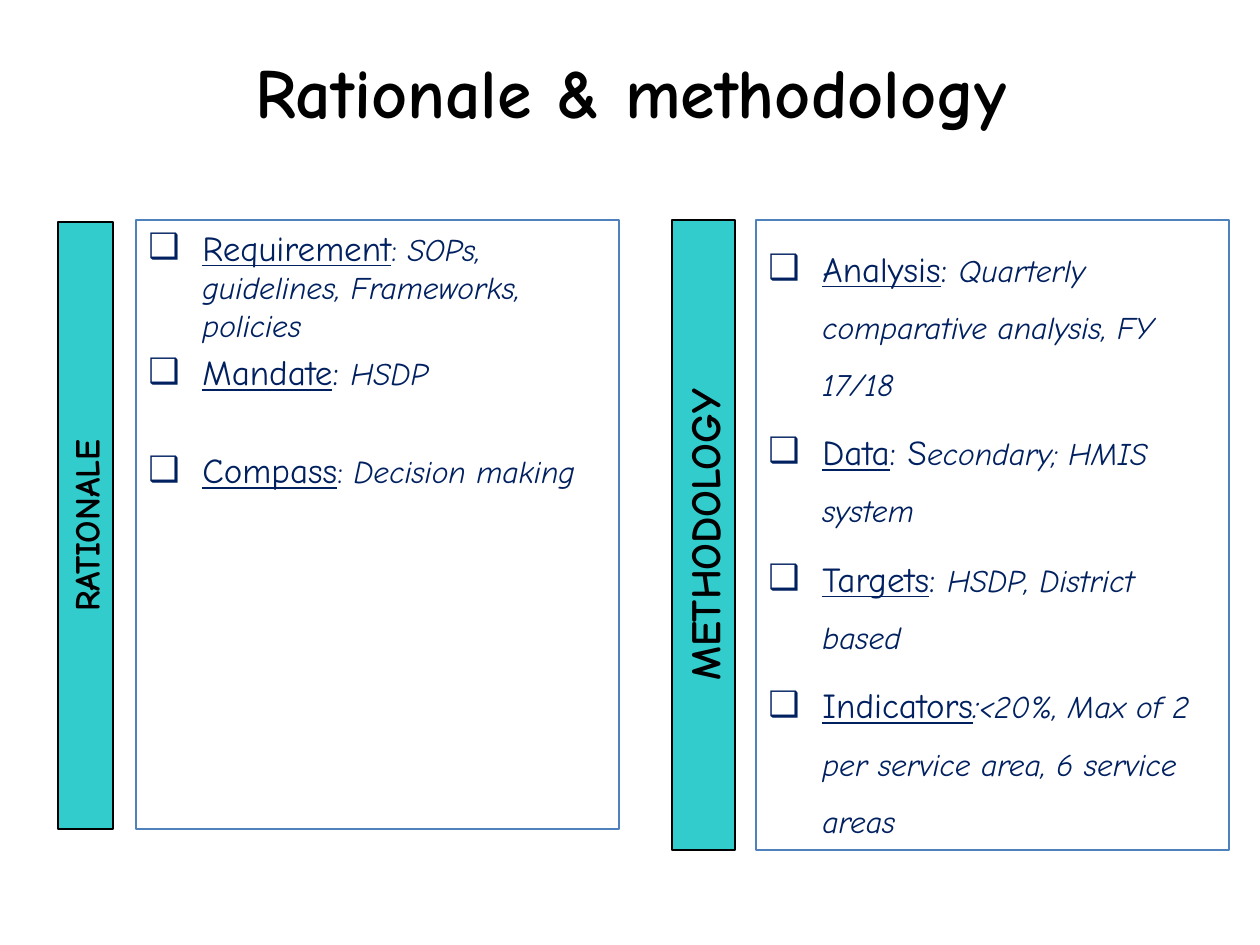
from pptx import Presentation
from pptx.dml.color import RGBColor
from pptx.enum.shapes import MSO_SHAPE as Shape
from pptx.enum.text import MSO_ANCHOR as Anchor, PP_ALIGN as Align
from pptx.oxml.ns import qn
from pptx.util import Emu, Pt
from lxml.etree import SubElement

PX_PER_INCH = 126
FONT = "Comic Neue"
TEAL, BLACK, NAVY, BLUE = "33CCCC", "000000", "002060", "4F81BD"


def px(length):
    """Turn pixels into EMU."""
    return Emu(round(length * 914400 / PX_PER_INCH))


def colour(code):
    """Turn a hex string into a colour."""
    return RGBColor.from_string(code)


def add_span(para, text, size=18, code=NAVY, bold=False, italic=False, underline=False):
    """Add one formatted run to a paragraph."""
    span = para.add_run()
    span.text = text
    font = span.font
    font.name, font.size, font.color.rgb = FONT, Pt(size), colour(code)
    font.bold, font.italic, font.underline = bold, italic, underline


def add_bullet(para, indent):
    """Give a paragraph a box bullet with a hanging indent."""
    props = para._p.get_or_add_pPr()
    props.set("marL", str(indent))
    props.set("indent", str(-indent))
    SubElement(props, qn("a:buFont"), typeface="Wingdings 2")
    props[-1].set("typeface", FONT)
    SubElement(props, qn("a:buChar"), char="❑")


class SlideBuilder:
    """Holds the style and the current slide."""

    def __init__(self, deck):
        """Add a title-only slide to the deck."""
        self.page = deck.slides.add_slide(deck.slide_layouts[5])

    def title(self, text, left, top, width, height):
        """Place and format the title."""
        box = self.page.shapes.title
        box.left, box.top, box.width, box.height = map(px, (left, top, width, height))
        box.text_frame.vertical_anchor = Anchor.TOP
        para = box.text_frame.paragraphs[0]
        para.alignment = Align.CENTER
        add_span(para, text, size=40, code=BLACK, bold=True)

    def rectangle(self, left, top, width, height, line):
        """Add a plain rectangle with a thin outline."""
        box = self.page.shapes.add_shape(Shape.RECTANGLE, *map(px, (left, top, width, height)))
        box.shadow.inherit = False
        box.fill.background()
        box.line.color.rgb = colour(line)
        box.line.width = Pt(0.75)
        box.text_frame.word_wrap = True
        return box

    def banner(self, text, left, top, width, height, size):
        """Add a teal bar whose label reads upwards."""
        shift = (height - width) / 2
        box = self.rectangle(left - shift, top + shift, height, width, BLACK)
        box.rotation = 270
        box.fill.solid()
        box.fill.fore_color.rgb = colour(TEAL)
        box.text_frame.vertical_anchor = Anchor.MIDDLE
        para = box.text_frame.paragraphs[0]
        para.alignment = Align.CENTER
        add_span(para, text, size=size, code=BLACK, bold=True)

    def panel(self, items, left, top, width, height, spacing=1.0):
        """Add an outlined list of (gap before, spans) items."""
        frame = self.rectangle(left, top, width, height, BLUE).text_frame
        frame.vertical_anchor = Anchor.TOP
        for index, (gap, term, mark, mark_format, detail) in enumerate(items):
            para = frame.add_paragraph() if index else frame.paragraphs[0]
            para.alignment = Align.LEFT
            para.line_spacing = spacing
            para.space_before = Pt(gap)
            add_bullet(para, px(54))
            add_span(para, term, size=20, underline=True)
            add_span(para, mark, **mark_format)
            add_span(para, detail, italic=True)


def main():
    """Build the slide and save it."""
    deck = Presentation()
    deck.slide_width, deck.slide_height = px(1260), px(945)
    slide = SlideBuilder(deck)
    small, large = {"size": 18}, {"size": 20}
    slide.title("Rationale & methodology", 1, 42, 1260, 129)
    slide.banner("RATIONALE", 58, 222, 55, 607, size=20)
    slide.panel([
        (0, "Requirement", ": ", small, "SOPs, guidelines, Frameworks, policies"),
        (4, "Mandate", ": ", large, "HSDP"),
        (32, "Compass", ": ", small, "Decision making"),
    ], 136, 220, 483, 609)
    slide.banner("METHODOLOGY", 672, 220, 63, 630, size=24)
    slide.panel([
        (0, "Analysis", ": ", large, "Quarterly comparative analysis, FY 17/18"),
        (4, "Data", ": S", large, "econdary; HMIS system"),
        (4, "Targets", ": ", large, "HSDP, District based"),
        (4, "Indicators", ":", {"size": 20, "italic": True},
         "<20%, Max of 2 per service area, 6 service areas"),
    ], 756, 220, 473, 630, spacing=1.5)
    deck.save("out.pptx")


if __name__ == "__main__":
    main()
